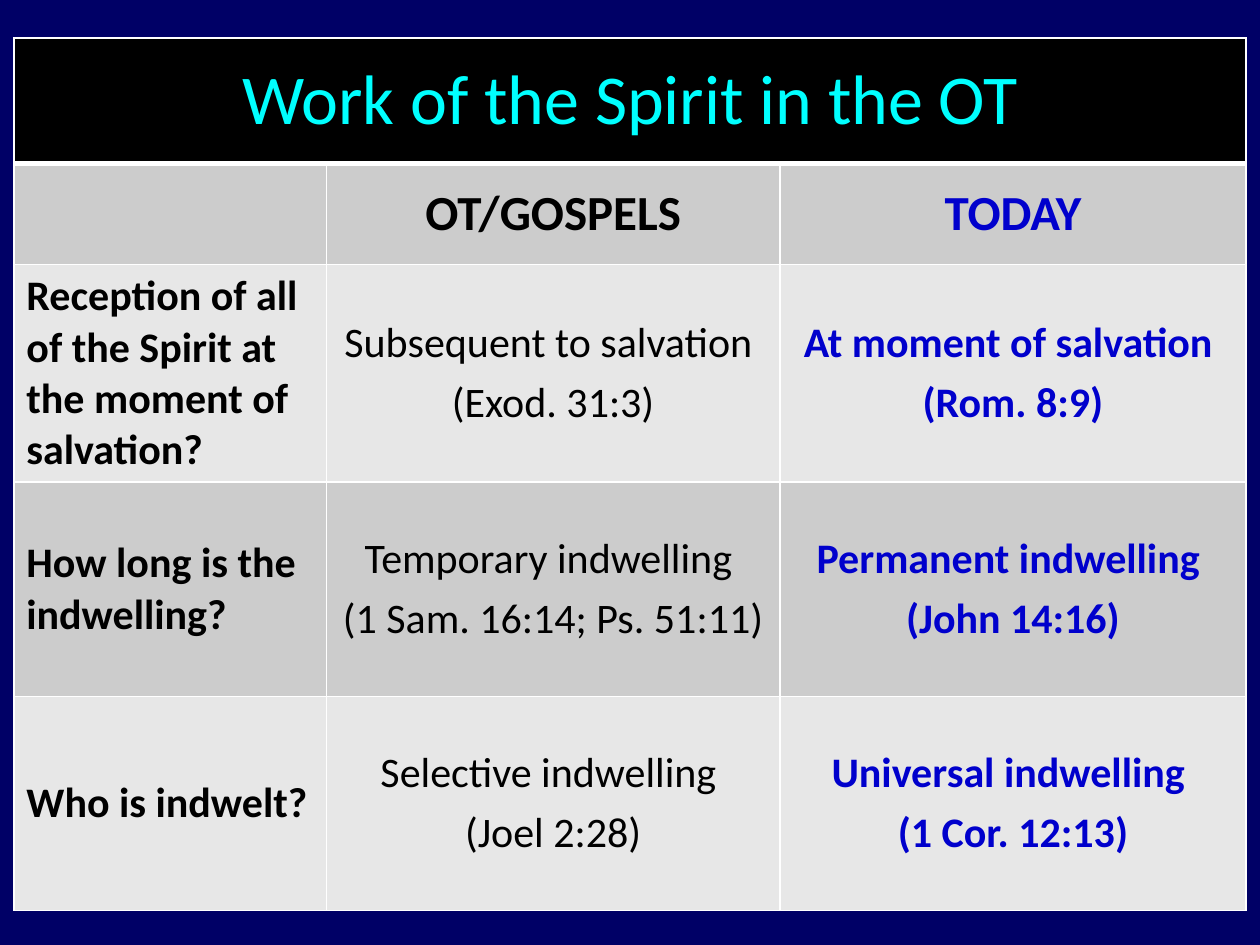
import dataclasses
import typing

import pptx
import pptx.dml.color
import pptx.enum.text
import pptx.oxml
import pptx.oxml.ns
import pptx.util

Pt = pptx.util.Pt
ALIGN = pptx.enum.text.PP_ALIGN
BLACK, BLUE, WHITE = "000000", "0000CC", "FFFFFF"
BANDS = ("CCCCCC", "E7E7E7")
WIDTHS = (178.6, 259.2, 266.4)
HEIGHTS = (72, 57.6, 122.4, 122.4, 122.4)


@dataclasses.dataclass
class Topic:
    question: str
    past: tuple[str, str]
    today: tuple[str, str]


TOPICS = (
    Topic("Reception of all of the Spirit at the moment of salvation?",
          ("Subsequent to salvation ", "(Exod. 31:3)"),
          ("At moment of salvation ", "(Rom. 8:9)")),
    Topic("How long is the indwelling?",
          ("Temporary indwelling ", "(1 Sam. 16:14; Ps. 51:11)"),
          ("Permanent indwelling ", "(John 14:16)")),
    Topic("Who is indwelt?",
          ("Selective indwelling ", "(Joel 2:28)"),
          ("Universal indwelling ", "(1 Cor. 12:13)")),
)


def paint(fill: typing.Any, color: str) -> None:
    fill.solid()
    fill.fore_color.rgb = pptx.dml.color.RGBColor.from_string(color)


def write(cell: typing.Any, *lines: str, size: float = 24, color: str = BLACK,
          bold: bool = False, align: typing.Any = ALIGN.CENTER) -> None:
    frame = cell.text_frame
    for i, line in enumerate(lines):
        para = frame.add_paragraph() if i else frame.paragraphs[0]
        para.alignment = align
        para.space_before = Pt(size * 0.2)
        run = para.add_run()
        run.text = line
        run.font.name = "Calibri"
        run.font.size = Pt(size)
        run.font.bold = bold
        paint(run.font.fill, color)


def style(cell: typing.Any, color: str, top: float = 1, bottom: float = 1) -> None:
    paint(cell.fill, color)
    cell.vertical_anchor = pptx.enum.text.MSO_ANCHOR.MIDDLE
    cell.margin_left = cell.margin_right = Pt(7.2)
    cell.margin_top = cell.margin_bottom = Pt(3.6)
    props = cell._tc.get_or_add_tcPr()
    sides = {"lnL": 1, "lnR": 1, "lnT": top, "lnB": bottom}
    for i, (tag, width) in enumerate(sides.items()):
        props.insert(i, pptx.oxml.parse_xml(
            f'<a:{tag} {pptx.oxml.ns.nsdecls("a")} w="{Pt(width)}"><a:solidFill>'
            f'<a:srgbClr val="{WHITE}"/></a:solidFill></a:{tag}>'))


def main() -> None:
    deck = pptx.Presentation()
    deck.slide_width, deck.slide_height = Pt(720), Pt(540)
    slide = deck.slides.add_slide(deck.slide_layouts[6])
    paint(slide.background.fill, "000066")

    table = slide.shapes.add_table(
        len(HEIGHTS), len(WIDTHS), Pt(7.9), Pt(21.6),
        Pt(sum(WIDTHS)), Pt(sum(HEIGHTS))).table
    for col, width in zip(table.columns, WIDTHS):
        col.width = Pt(width)
    for i, (row, height) in enumerate(zip(table.rows, HEIGHTS)):
        row.height = Pt(height)
        for cell in row.cells:
            if i == 0:
                style(cell, BLACK, bottom=3)
            else:
                style(cell, BANDS[(i - 1) % 2], top=3 if i == 1 else 1)

    title = table.cell(0, 0)
    title.merge(table.cell(0, 2))
    write(title, "Work of the Spirit in the OT", size=40, color="00FFFF")
    write(table.cell(1, 1), "OT/GOSPELS", size=28, bold=True)
    write(table.cell(1, 2), "TODAY", size=28, color=BLUE, bold=True)
    for i, topic in enumerate(TOPICS, 2):
        write(table.cell(i, 0), topic.question, bold=True, align=ALIGN.LEFT)
        write(table.cell(i, 1), *topic.past)
        write(table.cell(i, 2), *topic.today, color=BLUE, bold=True)

    deck.save("out.pptx")


if __name__ == "__main__":
    main()
